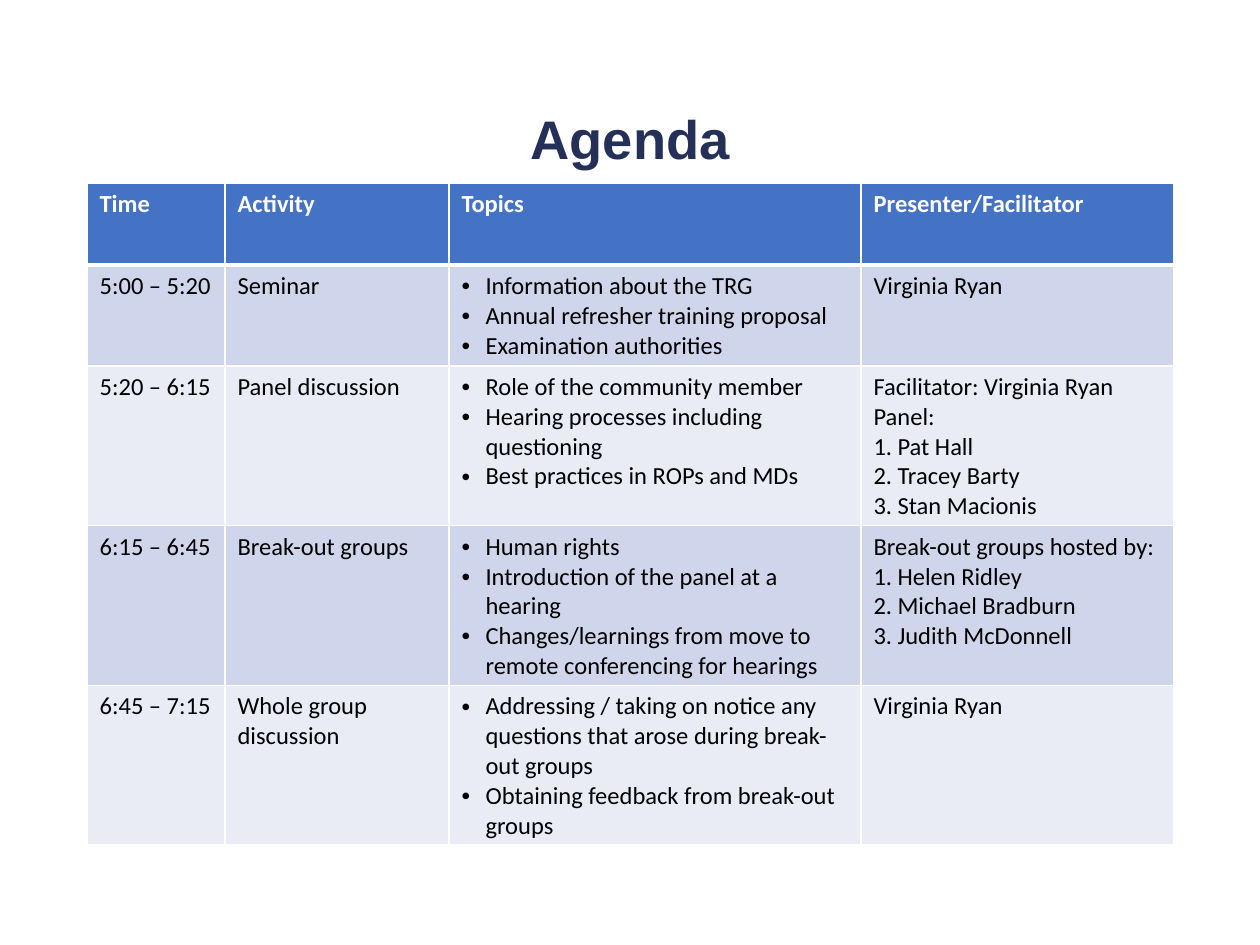
"""Build the agenda slide: a title over a timetable."""
from dataclasses import dataclass

from pptx import Presentation
from pptx.dml.color import RGBColor
from pptx.enum.text import MSO_ANCHOR, PP_ALIGN
from pptx.oxml import parse_xml
from pptx.oxml.ns import nsdecls
from pptx.util import Pt

MIDDLE, CENTER = MSO_ANCHOR.MIDDLE, PP_ALIGN.CENTER

TITLE = "Agenda"
HEAD = ["Time", "Activity", "Topics", "Presenter/Facilitator"]
BODY = [
    {"time": "5:00 – 5:20", "what": "Seminar",
     "topics": ["Information about the TRG",
                "Annual refresher training proposal",
                "Examination authorities"],
     "lead": ["Virginia Ryan"], "people": []},
    {"time": "5:20 – 6:15", "what": "Panel discussion",
     "topics": ["Role of the community member",
                "Hearing processes including questioning",
                "Best practices in ROPs and MDs"],
     "lead": ["Facilitator: Virginia Ryan", "Panel:"],
     "people": ["Pat Hall", "Tracey Barty", "Stan Macionis"]},
    {"time": "6:15 – 6:45", "what": "Break-out groups",
     "topics": ["Human rights",
                "Introduction of the panel at a hearing",
                "Changes/learnings from move to remote conferencing for hearings"],
     "lead": ["Break-out groups hosted by:"],
     "people": ["Helen Ridley", "Michael Bradburn", "Judith McDonnell"]},
    {"time": "6:45 – 7:15", "what": "Whole group discussion",
     "topics": ["Addressing / taking on notice any questions that arose "
                "during break-out groups",
                "Obtaining feedback from break-out groups"],
     "lead": ["Virginia Ryan"], "people": []},
]
COLS = [138, 224, 412, 313]
LEFT, TOP, ROW, FULL = 87, 183, 82, 661
INDENT = 24
MARKS = {
    "dot": ['<a:buFont {} typeface="Arial"/>', '<a:buChar {} char="•"/>'],
    "num": ['<a:buFont {} typeface="+mj-lt"/>',
            '<a:buAutoNum {} type="arabicPeriod"/>'],
}


@dataclass(frozen=True)
class Theme:
    title: dict
    head: dict
    text: dict
    fills: tuple = ("4472C4", "CFD5EA", "E9EBF5")
    rule: str = "FFFFFF"


THEME = Theme(
    title={"name": "Arial", "size": Pt(31), "bold": True, "color": "253058"},
    head={"name": "Calibri", "size": Pt(14), "bold": True, "color": "FFFFFF"},
    text={"name": "Calibri", "size": Pt(14), "bold": False, "color": "000000"},
)


def px(num):
    return round(num * 914400 / 126)


def style(font, look):
    for key, value in look.items():
        if key == "color":
            font.color.rgb = RGBColor.from_string(value)
        else:
            setattr(font, key, value)


def write(frame, lines, look):
    for i, (text, mark) in enumerate(lines):
        para = frame.add_paragraph() if i else frame.paragraphs[0]
        if mark:
            props = para._p.get_or_add_pPr()
            props.set("marL", str(px(INDENT)))
            props.set("indent", str(-px(INDENT)))
            for xml in MARKS[mark]:
                props.append(parse_xml(xml.format(nsdecls("a"))))
        run = para.add_run()
        run.text = text
        style(run.font, look)


def border(cell, row):
    props = cell._tc.get_or_add_tcPr()
    thick = {"T": row == 1, "B": row == 0}
    for side in "LRTB":
        width = Pt(3 if thick.get(side) else 1)
        props.append(parse_xml(
            f'<a:ln{side} {nsdecls("a")} w="{width}"><a:solidFill>'
            f'<a:srgbClr val="{THEME.rule}"/></a:solidFill></a:ln{side}>'))


def tag(lines, mark=None):
    return [(line, mark) for line in lines]


def add_title(slide):
    box = slide.shapes.add_textbox(px(LEFT), px(50), px(1086), px(183))
    frame = box.text_frame
    frame.word_wrap = True
    frame.vertical_anchor = MIDDLE
    write(frame, tag([TITLE]), THEME.title)
    para = frame.paragraphs[0]
    para.alignment, para.line_spacing = CENTER, 0.9


def add_agenda(slide):
    rows = [[tag([name]) for name in HEAD]]
    for part in BODY:
        rows.append([tag([part["time"]]), tag([part["what"]]),
                     tag(part["topics"], "dot"),
                     tag(part["lead"]) + tag(part["people"], "num")])
    holder = slide.shapes.add_table(
        len(rows), len(COLS), px(LEFT), px(TOP), px(sum(COLS)), px(FULL))
    table = holder.table
    for col, width in zip(table.columns, COLS):
        col.width = px(width)
    for r, row in enumerate(rows):
        table.rows[r].height = px(ROW)
        fill = THEME.fills[0 if r == 0 else 2 - r % 2]
        for c, lines in enumerate(row):
            cell = table.cell(r, c)
            write(cell.text_frame, lines, THEME.text if r else THEME.head)
            border(cell, r)
            cell.fill.solid()
            cell.fill.fore_color.rgb = RGBColor.from_string(fill)
    holder.height = px(FULL)


def main():
    deck = Presentation()
    deck.slide_width, deck.slide_height = px(1260), px(945)
    slide = deck.slides.add_slide(deck.slide_layouts[6])
    add_title(slide)
    add_agenda(slide)
    deck.save("out.pptx")


if __name__ == "__main__":
    main()
